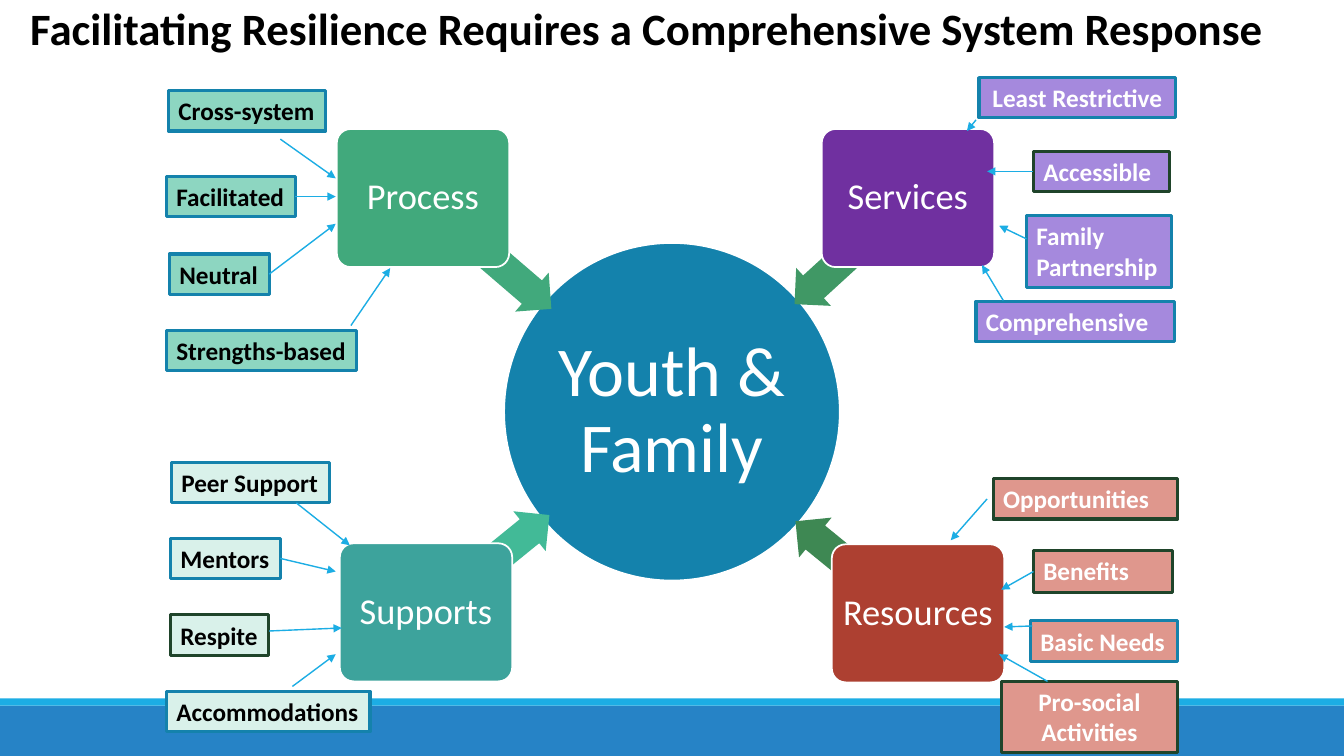
from lxml import etree
from pptx import Presentation
from pptx.dml.color import RGBColor
from pptx.enum import shapes, text
from pptx.oxml import ns
from pptx.util import Inches, Pt

WHITE = RGBColor(0xFF, 0xFF, 0xFF)
BLACK = RGBColor(0, 0, 0)
BLUE = RGBColor(0x14, 0x82, 0xAC)
SKY = RGBColor(0x1C, 0xAD, 0xE4)
FOOTER = RGBColor(0x26, 0x83, 0xC6)
DARK_GREEN = RGBColor(0x1F, 0x44, 0x2A)
GREEN = RGBColor(0x41, 0xA9, 0x7C)
MINT = RGBColor(0x8D, 0xD6, 0xC1)
PURPLE = RGBColor(0x70, 0x30, 0xA0)
LILAC = RGBColor(0xA5, 0x89, 0xDD)
ARROW_SERVICES = RGBColor(0x40, 0x98, 0x65)
TEAL = RGBColor(0x3D, 0xA3, 0x9C)
PALE = RGBColor(0xD9, 0xF1, 0xEA)
ARROW_SUPPORTS = RGBColor(0x42, 0xBA, 0x97)
RED = RGBColor(0xAD, 0x40, 0x31)
SALMON = RGBColor(0xDF, 0x97, 0x8D)
ARROW_RESOURCES = RGBColor(0x3E, 0x88, 0x53)

SHAPE = shapes.MSO_SHAPE
LEFT, CENTER = text.PP_ALIGN.LEFT, text.PP_ALIGN.CENTER
TOP, MIDDLE = text.MSO_ANCHOR.TOP, text.MSO_ANCHOR.MIDDLE
SIDE_LEFT, SIDE_RIGHT = 1, 3
HUB_SIZE = (1.71, 1.37)
BLOCK_ARROW_HEIGHT = 0.51

TITLE = "Facilitating Resilience Requires a Comprehensive System Response"
CENTRE = ("Youth & Family", (5, 2.41, 3.33, 3.35))
BARS = [((0, 7, 13.33, 0.5), FOOTER), ((0, 6.93, 13.33, 0.07), SKY)]

# Tag: text, box, outline, alignment, arrow start (point or joined side), arrow end
GROUPS = [
    dict(name="Supports", at=(3.37, 5.39), fill=TEAL, tag_fill=PALE, ink=BLACK, wrap=False,
         arrow=(4.25, 5.28, 1.35, 140.9, ARROW_SUPPORTS),
         tags=[
             ("Peer Support", (1.7, 4.59, 1.57, 0.4), BLUE, LEFT, (2.94, 4.99), (3.47, 5.41)),
             ("Mentors", (1.69, 5.34, 1.09, 0.4), BLUE, LEFT, SIDE_RIGHT, (3.33, 5.67)),
             ("Respite", (1.69, 6.1, 0.97, 0.4), DARK_GREEN, LEFT, (2.67, 6.26), (3.39, 6.23)),
             ("Accommodations", (1.65, 6.86, 2.02, 0.4), BLUE, LEFT, (2.9, 6.81), (3.33, 6.49)),
         ]),
    dict(name="Process", at=(3.34, 1.28), fill=GREEN, tag_fill=MINT, ink=BLACK, wrap=False,
         arrow=(4.15, 2.32, 1.5, 220.7, GREEN),
         tags=[
             ("Cross-system", (1.67, 0.9, 1.56, 0.4), BLUE, LEFT, (2.78, 1.38), (3.33, 1.77)),
             ("Facilitated", (1.65, 1.75, 1.28, 0.4), BLUE, LEFT, SIDE_RIGHT, (3.33, 1.95)),
             ("Neutral", (1.68, 2.52, 0.99, 0.4), BLUE, LEFT, SIDE_RIGHT, (3.33, 2.22)),
             ("Strengths-based", (1.65, 3.28, 1.89, 0.4), BLUE, LEFT, (3.48, 3.23), (3.87, 2.66)),
         ]),
    dict(name="Services", at=(8.15, 1.28), fill=PURPLE, tag_fill=LILAC, ink=WHITE, wrap=True,
         arrow=(7.67, 2.22, 1.61, 317.6, ARROW_SERVICES),
         tags=[
             ("Least Restrictive", (9.71, 0.77, 1.95, 0.4), BLUE, CENTER, (9.68, 1.19), (9.59, 1.3)),
             ("Accessible", (10.25, 1.5, 1.35, 0.4), DARK_GREEN, LEFT, SIDE_LEFT, (9.79, 1.7)),
             ("Family\nPartnership", (10.18, 2.14, 1.44, 0.71), BLUE, LEFT, (10.18, 2.37), (9.91, 2.24)),
             ("Comprehensive", (9.68, 2.99, 1.97, 0.4), BLUE, LEFT, (9.95, 2.98), (9.74, 2.63)),
         ]),
    dict(name="Resources", at=(8.25, 5.4), fill=RED, tag_fill=SALMON, ink=WHITE, wrap=True,
         arrow=(7.76, 5.28, 1.15, 39.2, ARROW_RESOURCES),
         tags=[
             ("Opportunities", (9.85, 4.75, 1.83, 0.4), DARK_GREEN, LEFT, (9.79, 4.95), (9.43, 5.36)),
             ("Benefits", (10.25, 5.46, 1.38, 0.42), DARK_GREEN, LEFT, SIDE_LEFT, (9.93, 5.85)),
             ("Basic Needs", (10.22, 6.16, 1.46, 0.4), BLUE, LEFT, (10.24, 6.21), (9.96, 6.22)),
             ("Pro-social Activities", (9.93, 6.76, 1.75, 0.71), DARK_GREEN, CENTER, (10.39, 6.76), (9.91, 6.49)),
         ]),
]


def add_box(s, kind, box, fill, line=None, width=1.25):
    """Add a flat filled shape, outlined when a line colour is given."""
    sp = s.shapes.add_shape(kind, *map(Inches, box))
    sp.shadow.inherit = False
    sp.fill.solid()
    sp.fill.fore_color.rgb = fill
    if line is None:
        sp.line.fill.background()
    else:
        sp.line.color.rgb = line
        sp.line.width = Pt(width)
    return sp


def set_text(sp, words, size, color, align=CENTER, anchor=MIDDLE, bold=False, wrap=True,
             inset=None, spacing=None):
    """Write and format the text of a shape."""
    tf = sp.text_frame
    tf.text = words
    tf.word_wrap = wrap
    tf.auto_size = text.MSO_AUTO_SIZE.NONE
    tf.vertical_anchor = anchor
    if inset is not None:
        tf.margin_left = tf.margin_right = tf.margin_top = tf.margin_bottom = Inches(inset)
    for p in tf.paragraphs:
        p.alignment = align
        p.line_spacing = spacing
        p.font.name = "Calibri"
        p.font.size = Pt(size)
        p.font.bold = bold
        p.font.color.rgb = color


def add_pointer(s, tag, start, end):
    """Add a thin arrow from a point, or from the middle of a tag's side."""
    begin = (0, 0) if isinstance(start, int) else start
    line = s.shapes.add_connector(shapes.MSO_CONNECTOR.STRAIGHT, *map(Inches, (*begin, *end)))
    if isinstance(start, int):
        line.begin_connect(tag, start)
    line.line.color.rgb = SKY
    line.line.width = Pt(1)
    etree.SubElement(line.line._get_or_add_ln(), ns.qn("a:tailEnd"), type="triangle")
    etree.SubElement(line._element.spPr, ns.qn("a:effectLst"))


def add_group(s, group):
    """Add a hub with its block arrow, tags and pointers."""
    x, y, w, angle, color = group["arrow"]
    arrow = add_box(s, SHAPE.LEFT_ARROW, (x, y, w, BLOCK_ARROW_HEIGHT), color)
    arrow.adjustments[0] = 0.6
    arrow.rotation = angle
    hub = add_box(s, SHAPE.ROUNDED_RECTANGLE, (*group["at"], *HUB_SIZE), group["fill"], WHITE)
    hub.adjustments[0] = 0.1
    set_text(hub, group["name"], 26, WHITE, inset=0.05, spacing=0.9)
    for words, box, outline, align, start, end in group["tags"]:
        tag = add_box(s, SHAPE.RECTANGLE, box, group["tag_fill"], outline, 2.25)
        set_text(tag, words, 18, group["ink"], align, TOP, True, group["wrap"])
        add_pointer(s, tag, start, end)


def main():
    """Build the slide and save it."""
    prs = Presentation()
    prs.slide_width, prs.slide_height = Inches(13.33), Inches(7.5)
    s = prs.slides.add_slide(prs.slide_layouts[5])
    title = s.shapes.title
    title.left, title.top, title.width, title.height = map(Inches, (0.2, -0.04, 12.44, 0.64))
    set_text(title, TITLE, 32, BLACK, LEFT, TOP, True, False)
    for box, color in BARS:
        add_box(s, SHAPE.RECTANGLE, box, color)
    words, box = CENTRE
    circle = add_box(s, SHAPE.OVAL, box, BLUE, WHITE)
    set_text(circle, words, 50, WHITE, inset=0.03, spacing=0.9)
    for group in GROUPS:
        add_group(s, group)
    prs.save("out.pptx")


if __name__ == "__main__":
    main()
